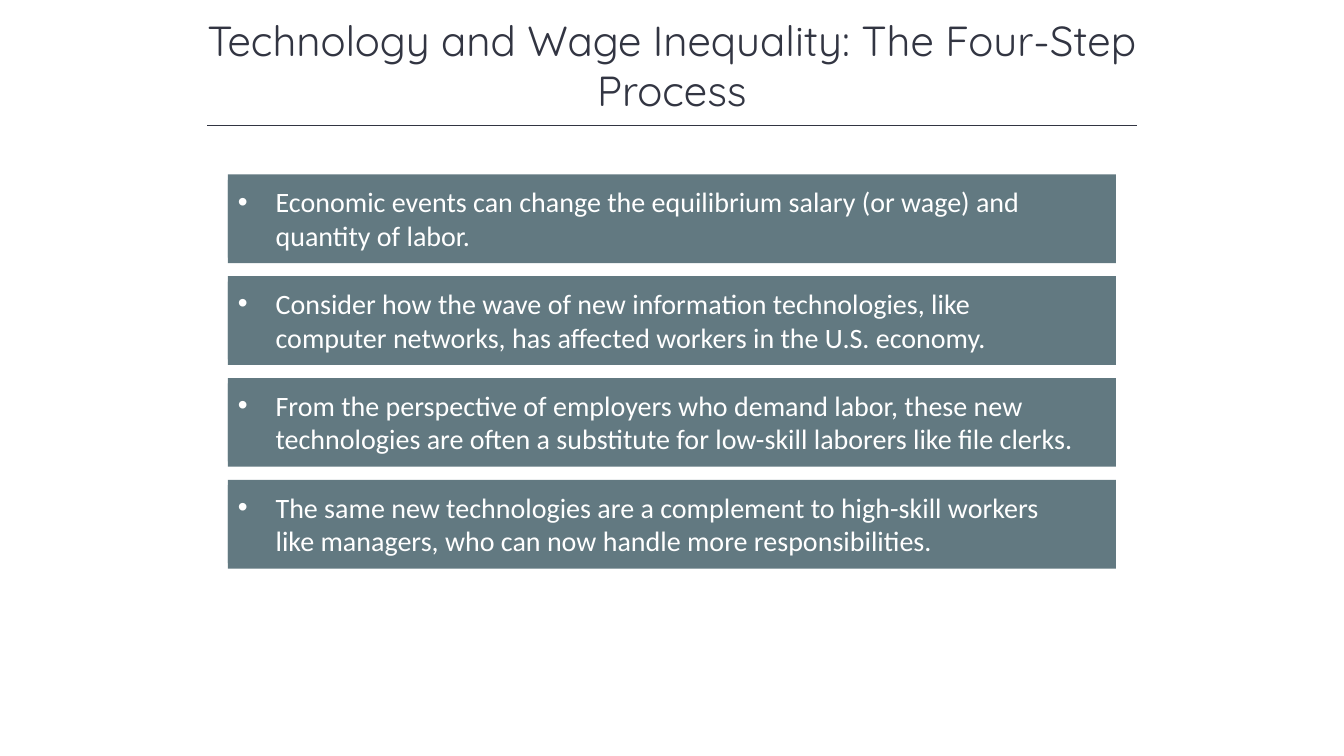
import lxml.etree
import pptx
import pptx.dml.color
import pptx.enum.shapes
import pptx.enum.text
import pptx.oxml.ns
import pptx.util

INK = pptx.dml.color.RGBColor(0x32, 0x35, 0x42)
SLATE = pptx.dml.color.RGBColor(0x62, 0x79, 0x81)
WHITE = pptx.dml.color.RGBColor(0xFF, 0xFF, 0xFF)
Pt = pptx.util.Pt
qn = pptx.oxml.ns.qn

HEADING = "Technology and Wage Inequality: The Four-Step Process"
STEPS = [
    "Economic events can change the equilibrium salary (or wage) and quantity of labor.",
    "Consider how the wave of new information technologies, like computer networks, "
    "has affected workers in the U.S. economy.",
    "From the perspective of employers who demand labor, these new technologies "
    "are often a substitute for low-skill laborers like file clerks.",
    "The same new technologies are a complement to high-skill workers like managers, "
    "who can now handle more responsibilities.",
]
FRAME_FORMAT = {
    "word_wrap": True,
    "auto_size": pptx.enum.text.MSO_AUTO_SIZE.NONE,
    "vertical_anchor": pptx.enum.text.MSO_ANCHOR.TOP,
    "margin_left": Pt(7.2),
    "margin_right": Pt(7.2),
    "margin_top": Pt(3.6),
    "margin_bottom": Pt(3.6),
}
BAND_LEFT, BAND_TOP, BAND_WIDTH, BAND_HEIGHT = 162.8, 124.6, 634.4, 63.4
BAND_PITCH = 72.7
STEP_WIDTH, STEP_HEIGHT, STEP_INSET = 615, 55.7, 3.8


def write_text(shape, text, alignment, font_name, size, color):
    frame = shape.text_frame
    for name, value in FRAME_FORMAT.items():
        setattr(frame, name, value)
    paragraph = frame.paragraphs[0]
    paragraph.alignment = alignment
    run = paragraph.add_run()
    run.text = text
    run.font.name = font_name
    run.font.size = Pt(size)
    run.font.color.rgb = color
    return paragraph


def add_panel(group, left, top, width, height):
    panel = group.shapes.add_shape(
        pptx.enum.shapes.MSO_SHAPE.RECTANGLE, Pt(left), Pt(top), Pt(width), Pt(height))
    panel.shadow.inherit = False
    panel.fill.solid()
    panel.fill.fore_color.rgb = SLATE
    panel.line.fill.background()
    return panel


deck = pptx.Presentation()
deck.slide_width, deck.slide_height = Pt(960), Pt(540)
slide = deck.slides.add_slide(deck.slide_layouts[5])

heading = slide.shapes.title
heading.left, heading.top, heading.width, heading.height = Pt(120), Pt(6.5), Pt(720), Pt(80)
write_text(heading, HEADING, pptx.enum.text.PP_ALIGN.CENTER, "Quicksand", 30, INK)

heading_rule = slide.shapes.add_connector(
    pptx.enum.shapes.MSO_CONNECTOR.STRAIGHT, Pt(148), Pt(89.5), Pt(812), Pt(89.5))
heading_rule.line.color.rgb = INK
heading_rule.line.width = Pt(1)
lxml.etree.SubElement(heading_rule._element.spPr, qn("a:effectLst"))

for index, step in enumerate(STEPS):
    top = BAND_TOP + index * BAND_PITCH
    band = slide.shapes.add_group_shape()
    add_panel(band, BAND_LEFT, top, BAND_WIDTH, BAND_HEIGHT)
    step_panel = add_panel(band, BAND_LEFT, top + STEP_INSET, STEP_WIDTH, STEP_HEIGHT)
    paragraph = write_text(
        step_panel, step, pptx.enum.text.PP_ALIGN.LEFT, "Calibri", 20, WHITE)
    properties = paragraph._p.get_or_add_pPr()
    properties.set("marL", str(Pt(27)))
    properties.set("indent", str(Pt(-27)))
    lxml.etree.SubElement(properties, qn("a:buFont"), typeface="Arial")
    lxml.etree.SubElement(properties, qn("a:buChar"), char="•")

deck.save("out.pptx")
